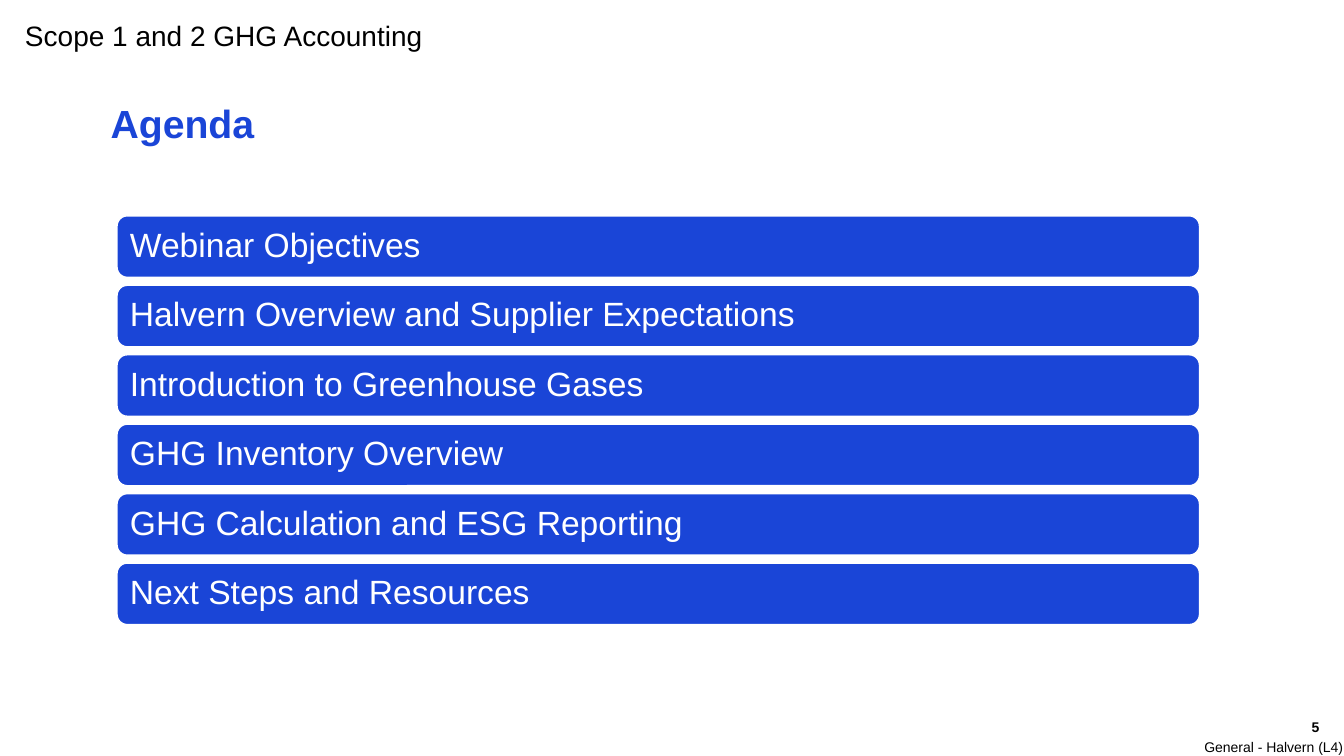
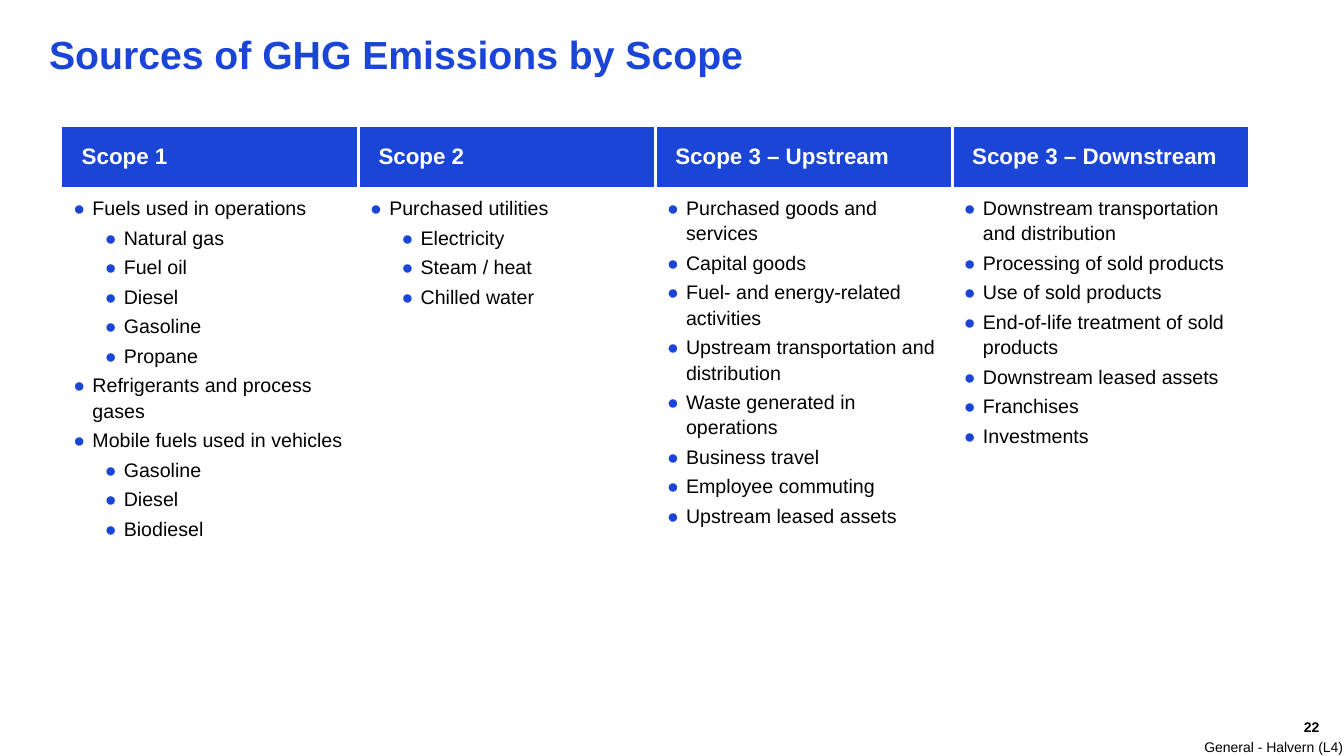
from lxml.etree import SubElement
from pptx import Presentation
from pptx.dml.color import RGBColor
from pptx.enum.shapes import MSO_SHAPE
from pptx.enum.text import MSO_ANCHOR, PP_ALIGN
from pptx.oxml import parse_xml
from pptx.oxml.ns import nsdecls, qn
from pptx.util import Cm, Pt

# Shared colours and formats
BLUE, WHITE, BLACK = "1A45D7", "FFFFFF", "000000"
NO_STYLE = "{2D5ABB26-0587-4C30-8999-92F81FD0307C}"
rgb = RGBColor.from_string

no_margins = dict.fromkeys(
    ("margin_left", "margin_top", "margin_right", "margin_bottom"), Cm(0))
title_font = {"size": Pt(28), "bold": True}
tight_lines = {"line_spacing": 0.9}
right_aligned = {"alignment": PP_ALIGN.RIGHT}


def apply_format(target, values):
    for name, value in values.items():
        setattr(target, name, value)


def write(paragraph, text, color, font_format, paragraph_format):
    apply_format(paragraph, paragraph_format)
    run = paragraph.add_run()
    run.text = text
    apply_format(run.font, {"name": "Arial", **font_format})
    run.font.color.rgb = rgb(color)


deck = Presentation()
apply_format(deck, {"slide_width": Cm(33.87), "slide_height": Cm(19.05)})
blank = deck.slide_layouts[6]
agenda = deck.slides.add_slide(blank)
sources = deck.slides.add_slide(blank)

# Titles, page numbers and footers: slide, text, box, colour, formats
labels = [
    (agenda, "Scope 1 and 2 GHG Accounting", (0.38, 0.33, 27.4, 1.24), BLACK,
     {"size": Pt(20)}, {}, {}),
    (agenda, "Agenda", (2.79, 2.64, 27.4, 2.67), BLUE,
     title_font, tight_lines, no_margins),
    (sources, "Sources of GHG Emissions by Scope", (1.24, 0.91, 31.4, 1.9), BLUE,
     title_font, tight_lines, no_margins),
]
for slide, page in ((agenda, "5"), (sources, "22")):
    labels += [
        (slide, page, (32.1, 18.11, 1.15, 0.94), BLACK,
         {"size": Pt(10), "bold": True}, right_aligned, no_margins),
        (slide, "General - Halvern (L4)", (30.35, 18.62, 3.52, 0.43), BLACK,
         {"size": Pt(10)}, {}, no_margins),
    ]
for slide, text, box, color, font_format, paragraph_format, margins in labels:
    frame = slide.shapes.add_textbox(*map(Cm, box)).text_frame
    apply_format(frame, {"word_wrap": True, **margins})
    write(frame.paragraphs[0], text, color, font_format, paragraph_format)

# Agenda bars
topics = [
    "Webinar Objectives",
    "Halvern Overview and Supplier Expectations",
    "Introduction to Greenhouse Gases",
    "GHG Inventory Overview",
    "GHG Calculation and ESG Reporting",
    "Next Steps and Resources",
]
for index, topic in enumerate(topics):
    bar = agenda.shapes.add_shape(
        MSO_SHAPE.ROUNDED_RECTANGLE,
        Cm(2.95), Cm(5.44 + 1.75 * index), Cm(27.28), Cm(1.55))
    bar.shadow.inherit = False
    bar.fill.solid()
    bar.fill.fore_color.rgb = rgb(BLUE)
    bar.line.color.rgb = rgb(WHITE)
    bar.line.width = Pt(1)
    apply_format(bar.text_frame, {
        "word_wrap": True, "vertical_anchor": MSO_ANCHOR.MIDDLE,
        "margin_left": Cm(0.25), "margin_right": Cm(0.25)})
    write(bar.text_frame.paragraphs[0], topic, WHITE, {"size": Pt(24)},
          {"alignment": PP_ALIGN.LEFT, **tight_lines})

# Emission sources by scope: (level, source)
scopes = {
    "Scope 1": [
        (0, "Fuels used in operations"),
        (1, "Natural gas"), (1, "Fuel oil"), (1, "Diesel"),
        (1, "Gasoline"), (1, "Propane"),
        (0, "Refrigerants and process gases"),
        (0, "Mobile fuels used in vehicles"),
        (1, "Gasoline"), (1, "Diesel"), (1, "Biodiesel"),
    ],
    "Scope 2": [
        (0, "Purchased utilities"),
        (1, "Electricity"), (1, "Steam / heat"), (1, "Chilled water"),
    ],
    "Scope 3 – Upstream": [
        (0, "Purchased goods and services"),
        (0, "Capital goods"),
        (0, "Fuel- and energy-related activities"),
        (0, "Upstream transportation and distribution"),
        (0, "Waste generated in operations"),
        (0, "Business travel"),
        (0, "Employee commuting"),
        (0, "Upstream leased assets"),
    ],
    "Scope 3 – Downstream": [
        (0, "Downstream transportation and distribution"),
        (0, "Processing of sold products"),
        (0, "Use of sold products"),
        (0, "End-of-life treatment of sold products"),
        (0, "Downstream leased assets"),
        (0, "Franchises"),
        (0, "Investments"),
    ],
}
scope_frame = sources.shapes.add_table(
    2, len(scopes), Cm(1.56), Cm(3.2), Cm(29.92), Cm(10.95))
scope_frame.element.find(".//" + qn("a:tableStyleId")).text = NO_STYLE
scope_table = scope_frame.table
scope_table.horz_banding = False
scope_table.rows[0].height = Cm(1.5)
scope_table.rows[1].height = Cm(9.45)

side_margins = {"margin_right": Cm(0.13), "margin_bottom": Cm(0.08)}
for column, (scope, items) in enumerate(scopes.items()):
    # Header cell with white dividers
    header = scope_table.cell(0, column)
    apply_format(header, {
        "margin_left": Cm(0.5), "margin_top": Cm(0.08),
        "vertical_anchor": MSO_ANCHOR.MIDDLE, **side_margins})
    header.fill.solid()
    header.fill.fore_color.rgb = rgb(BLUE)
    write(header.text_frame.paragraphs[0], scope, WHITE,
          {"size": Pt(16), "bold": True}, {})
    edges = ["lnL", "lnR"] if column else ["lnR"]
    for position, edge in enumerate(edges):
        divider = parse_xml(
            f'<a:{edge} {nsdecls("a")} w="{Pt(2.25)}"><a:solidFill>'
            f'<a:srgbClr val="{WHITE}"/></a:solidFill></a:{edge}>')
        header._tc.get_or_add_tcPr().insert(position, divider)

    # Bulleted sources
    body = scope_table.cell(1, column)
    apply_format(body, {
        "margin_left": Cm(0.13), "margin_top": Cm(0.2), **side_margins})
    body.fill.background()
    for row, (level, item) in enumerate(items):
        frame = body.text_frame
        paragraph = frame.add_paragraph() if row else frame.paragraphs[0]
        properties = paragraph._p.get_or_add_pPr()
        properties.set("marL", str(Cm(0.64 + 0.79 * level)))
        properties.set("indent", str(Cm(-0.48)))
        bullet_color = SubElement(properties, qn("a:buClr"))
        SubElement(bullet_color, qn("a:srgbClr"), val=BLUE)
        SubElement(properties, qn("a:buFont"), typeface="Arial")
        SubElement(properties, qn("a:buChar"), char="●")
        write(paragraph, item, BLACK, {"size": Pt(14), "bold": False}, {
            "level": level, "line_spacing": 1.15,
            "space_before": Pt(3 if row else 0)})

deck.save("out.pptx")
